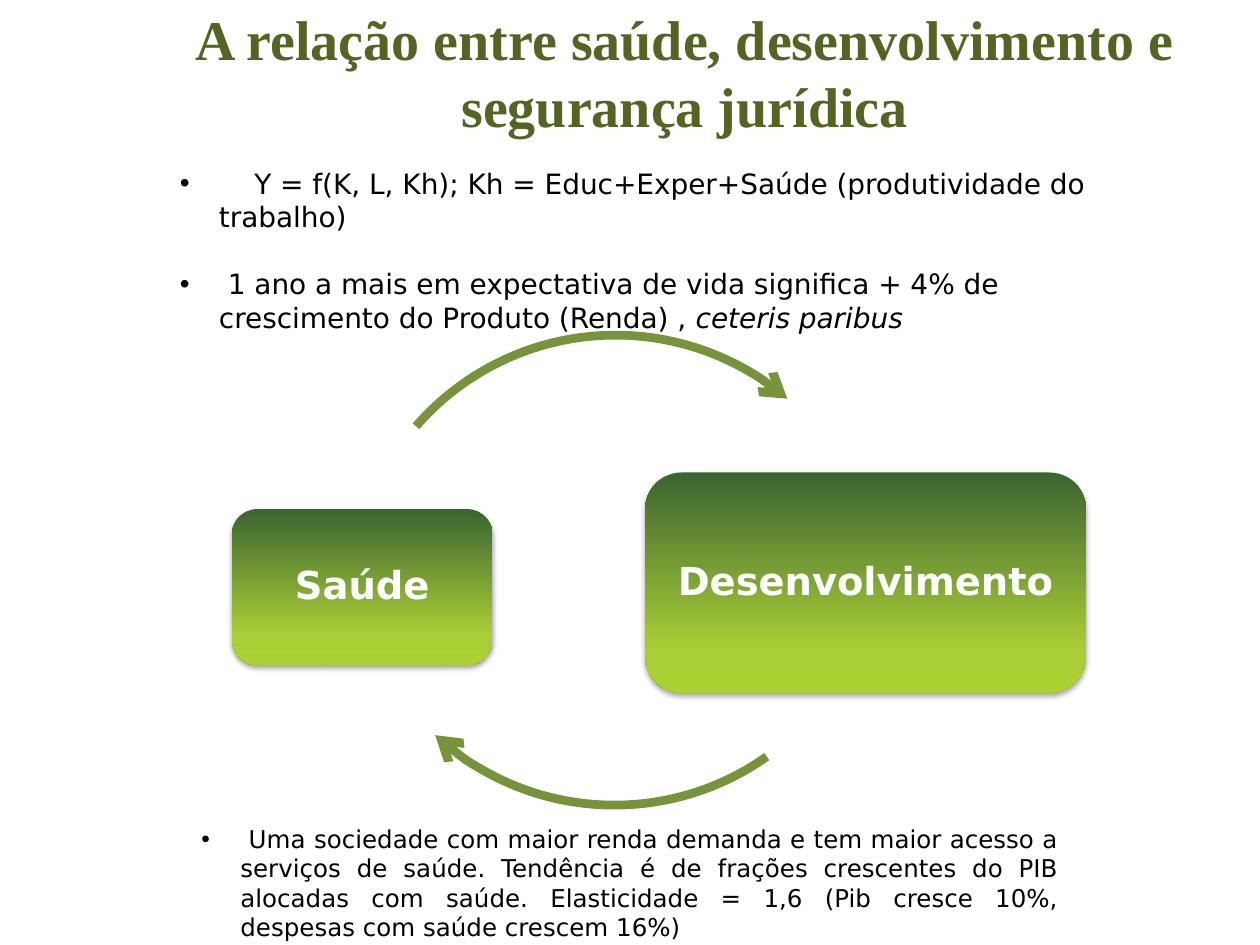
"""Build the slide on health, development and legal certainty."""
import math
from lxml import etree
from pptx import Presentation, util as u
from pptx.dml.color import RGBColor
from pptx.enum import shapes, text
from pptx.oxml import parse_xml
from pptx.oxml.ns import qn

NS = 'xmlns:a="http://schemas.openxmlformats.org/drawingml/2006/main"'
WIDE, HIGH = 10, 7.5
SANS, SERIF = "DejaVu Sans", "Times New Roman"
BLACK, WHITE, MOSS, LEAF = "000000", "FFFFFF", "546422", "77933C"
GRAD = [(0, "3B6431"), (80, "A9CE35"), (100, "ABD132")]
HANG, STEP = 0.31, 0.59
MID, LEFT = text.PP_ALIGN.CENTER, text.PP_ALIGN.LEFT
JUST = text.PP_ALIGN.JUSTIFY

TITLE = "A relação entre saúde, desenvolvimento e segurança jurídica"
NOTES = [
    ((1.33, 1.27, 7.76, 1.72), 16, LEFT, [
        [("\tY = f(K, L, Kh); Kh = Educ+Exper+Saúde (produtividade do trabalho)", False)],
        [(" 1 ano a mais em expectativa de vida significa + 4% de crescimento"
          " do Produto (Renda) , ", False), ("ceteris paribus", True)],
    ]),
    ((1.5, 6.49, 7, 1.01), 14, JUST, [
        [(" Uma sociedade com maior renda demanda e tem maior acesso a serviços de saúde."
          " Tendência é de frações crescentes do PIB alocadas com saúde."
          " Elasticidade = 1,6 (Pib cresce 10%, despesas com saúde crescem 16%)", False)],
    ]),
]
BOXES = [("Saúde", (1.84, 4.04, 2.07, 1.24)),
         ("Desenvolvimento", (5.12, 3.75, 3.5, 1.75))]
RING = 4.19
ARCS = [((2.79, 2.66), 220.9, 89.7), ((2.78, 2.2), 54.7, 78)]


def rgb(code):
    """Turn a hex string into a colour."""
    return RGBColor.from_string(code)


def inch(vals):
    """Turn inches into slide units."""
    return [u.Inches(v) for v in vals]


def write(para, words, size=16, face=SANS, color=BLACK, bold=False, ital=False, align=LEFT):
    """Add a formatted run to a paragraph."""
    para.alignment = align
    run = para.add_run()
    run.text = words
    font = run.font
    font.name, font.size, font.bold, font.italic = face, u.Pt(size), bold, ital
    font.color.rgb = rgb(color)


def head(slide):
    """Fill the title placeholder."""
    top = slide.shapes.title
    top.left, top.top, top.width, top.height = inch((0.98, 0.02, 8.91, 1.1))
    frame = top.text_frame
    frame.word_wrap, frame.auto_size = True, text.MSO_AUTO_SIZE.NONE
    frame.vertical_anchor = text.MSO_ANCHOR.MIDDLE
    write(frame.paragraphs[0], TITLE, size=32, face=SERIF, color=MOSS, bold=True, align=MID)


def bullet(para):
    """Give a paragraph a hanging bullet and a tab stop."""
    props = para._p.get_or_add_pPr()
    props.set("marL", str(u.Inches(HANG)))
    props.set("indent", str(-u.Inches(HANG)))
    etree.SubElement(props, qn("a:buFont"), typeface="Arial")
    etree.SubElement(props, qn("a:buChar"), char="•")
    tabs = etree.SubElement(props, qn("a:tabLst"))
    etree.SubElement(tabs, qn("a:tab"), pos=str(u.Inches(STEP)), algn="l")


def note(slide, area, size, align, items):
    """Add a bulleted text box."""
    frame = slide.shapes.add_textbox(*inch(area)).text_frame
    frame.word_wrap = True
    for i, runs in enumerate(items):
        para = frame.add_paragraph() if i else frame.paragraphs[0]
        bullet(para)
        if i:
            para.space_before = u.Pt(size * 1.2)
        for words, ital in runs:
            write(para, words, size=size, ital=ital, align=align)


def box(slide, label, area):
    """Add a labelled box with a gradient and a soft shadow."""
    shape = slide.shapes.add_shape(shapes.MSO_SHAPE.ROUNDED_RECTANGLE, *inch(area))
    shape.line.fill.background()
    stops = "".join(f'<a:gs pos="{pos * 1000}"><a:srgbClr val="{code}"/></a:gs>'
                    for pos, code in GRAD)
    props = shape._element.spPr
    props.insert(2, parse_xml(f'<a:gradFill {NS} rotWithShape="1"><a:gsLst>{stops}</a:gsLst>'
                              '<a:lin ang="5400000" scaled="0"/></a:gradFill>'))
    props.append(parse_xml(
        f'<a:effectLst {NS}><a:outerShdw blurRad="{u.Pt(3.1)}" dist="{u.Pt(1.8)}" '
        f'dir="5400000" rotWithShape="0"><a:srgbClr val="{BLACK}"><a:alpha val="35000"/>'
        '</a:srgbClr></a:outerShdw></a:effectLst>'))
    frame = shape.text_frame
    frame.word_wrap, frame.vertical_anchor = True, text.MSO_ANCHOR.MIDDLE
    frame.margin_left = frame.margin_right = u.Inches(0.09)
    para = frame.paragraphs[0]
    para.line_spacing = 0.9
    write(para, label, size=22, color=WHITE, bold=True, align=MID)


def arc(slide, corner, start, sweep):
    """Add an arrow that runs along part of a ring."""
    form = slide.shapes.build_freeform(*inch(corner))
    form.add_line_segments([inch(c + RING for c in corner)], close=False)
    shape = form.convert_to_shape()
    shape.shadow.inherit = False
    shape.fill.background()
    shape.line.color.rgb, shape.line.width = rgb(LEAF), u.Pt(5)
    etree.SubElement(shape.line._get_or_add_ln(), qn("a:tailEnd"), type="arrow")
    track = next(shape._element.iter(qn("a:path")))
    track.remove(track.find(qn("a:lnTo")))
    half, turn = u.Inches(RING / 2), math.radians(start)
    point = track.find(qn("a:moveTo"))[0]
    point.set("x", str(round(half * (1 + math.cos(turn)))))
    point.set("y", str(round(half * (1 + math.sin(turn)))))
    etree.SubElement(track, qn("a:arcTo"), wR=str(half), hR=str(half),
                     stAng=str(round(start * 60000)), swAng=str(round(sweep * 60000)))


def main():
    """Build and save the slide."""
    deck = Presentation()
    deck.slide_width, deck.slide_height = inch((WIDE, HIGH))
    slide = deck.slides.add_slide(deck.slide_layouts[5])
    head(slide)
    for item in BOXES:
        box(slide, *item)
    for item in ARCS:
        arc(slide, *item)
    for item in NOTES:
        note(slide, *item)
    deck.save("out.pptx")


if __name__ == "__main__":
    main()
